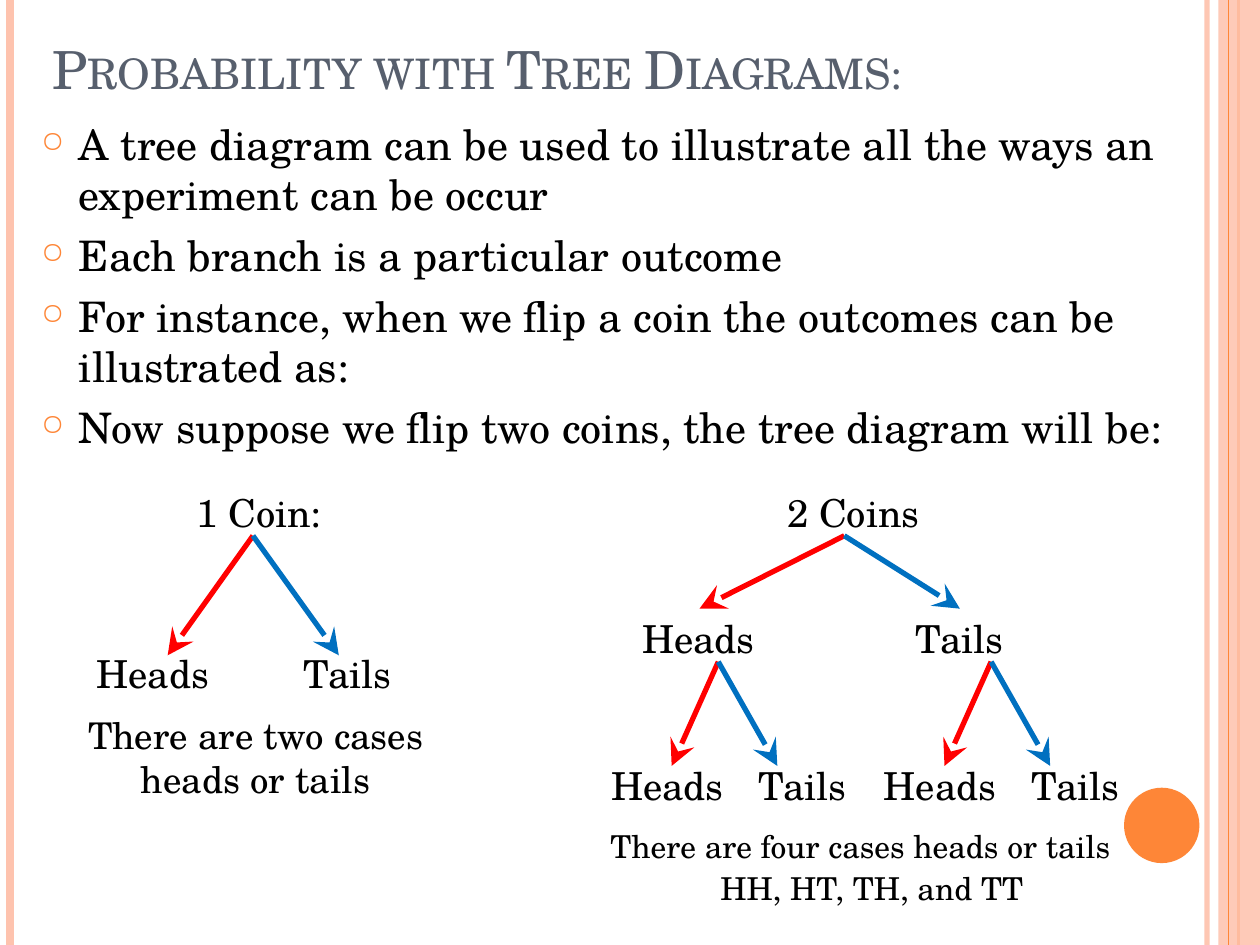
from lxml.etree import SubElement
from pptx import Presentation
from pptx.dml.color import RGBColor
from pptx.enum.shapes import MSO_CONNECTOR, MSO_SHAPE
from pptx.enum.text import MSO_ANCHOR, MSO_AUTO_SIZE, PP_ALIGN
from pptx.oxml.ns import qn
from pptx.util import Cm, Pt

ORANGE = RGBColor(0xFE, 0x86, 0x37)
PEACH = RGBColor(0xFE, 0xC3, 0xAE)
SLATE = RGBColor(0x57, 0x5F, 0x6D)
BLACK = RGBColor(0, 0, 0)
RED = RGBColor(0xFF, 0, 0)
BLUE = RGBColor(0, 0x70, 0xC0)
FONT = "TeX Gyre Schola"
WIDTH, HEIGHT = 25.4, 19.05

TITLE = "Probability with Tree Diagrams:"
POINTS = [
    "A tree diagram can be used to illustrate all the ways an experiment can be occur",
    "Each branch is a particular outcome",
    "For instance, when we flip a coin the outcomes can be illustrated as:",
    "Now suppose we flip two coins, the tree diagram will be:",
]
HEADINGS = [("1 Coin:", 3.71, 3.07), ("2 Coins", 15.62, 3.2)]
HEADING_TOP = 9.73
OUTCOMES = [("Heads", RED, 2.79), ("Tails", BLUE, 2.31)]
LABEL_HEIGHT = 1.19

SUBTREE_STEP = 5.5
ONE_COIN = dict(apex=(5.1, 10.8), tips=(3.38, 6.83), tip_y=13.21,
                labels=(1.7, 5.87), label_y=12.98)
TWO_COINS = dict(apex=(17.02, 10.8), tips=(14.1, 19.35), tip_y=12.27,
                 labels=(12.7, 12.7 + SUBTREE_STEP), label_y=12.27)
SECOND_FLIP = dict(apex=(14.48, 13.34), tips=(13.54, 15.67), tip_y=15.44,
                   labels=(12.07, 15.04), label_y=15.24)

SUMMARIES = [
    (["There are two cases", "heads or tails"], (1.47, 14.25, 7.37, 2.06), 21, False),
    (["There are four cases heads or tails"], (11.63, 16.54, 11.43, 1.02), 18, True),
    (["HH, HT, TH, and TT"], (11.86, 17.4, 11.43, 1.02), 18, True),
]

prs = Presentation()
prs.slide_width, prs.slide_height = Cm(WIDTH), Cm(HEIGHT)
slide = prs.slides.add_slide(prs.slide_layouts[6])


def add_line(start, end, color, weight):
    line = slide.shapes.add_connector(
        MSO_CONNECTOR.STRAIGHT, *(Cm(v) for v in (*start, *end)))
    line.line.color.rgb = color
    line.line.width = Pt(weight)
    SubElement(line._element.spPr, qn("a:effectLst"))
    return line


def set_alpha(fill_parent, percent):
    color = fill_parent.find(".//" + qn("a:srgbClr"))
    SubElement(color, qn("a:alpha"), val=str(percent * 1000))


def add_plain_shape(kind, box, color):
    shape = slide.shapes.add_shape(kind, *(Cm(v) for v in box))
    shape.shadow.inherit = False
    shape.fill.solid()
    shape.fill.fore_color.rgb = color
    shape.line.fill.background()
    return shape


def add_text(paragraphs, box, size, color=BLACK, align=PP_ALIGN.LEFT,
             wrap=True, grow=True):
    frame = slide.shapes.add_textbox(*(Cm(v) for v in box)).text_frame
    frame.word_wrap = wrap
    frame.auto_size = MSO_AUTO_SIZE.SHAPE_TO_FIT_TEXT if grow else MSO_AUTO_SIZE.NONE
    for i, text in enumerate(paragraphs):
        paragraph = frame.paragraphs[0] if i == 0 else frame.add_paragraph()
        paragraph.alignment = align
        run = paragraph.add_run()
        run.text = text
        run.font.name = FONT
        run.font.size = Pt(size)
        run.font.color.rgb = color
    return frame


def add_bullet(paragraph):
    paragraph.space_before = Pt(6)
    props = paragraph._p.get_or_add_pPr()
    props.set("marL", str(Cm(0.76)))
    props.set("indent", str(-Cm(0.76)))
    SubElement(SubElement(props, qn("a:buClr")), qn("a:srgbClr"), val=str(ORANGE))
    SubElement(props, qn("a:buSzPct"), val="70000")
    SubElement(props, qn("a:buChar"), char="○")


def add_fork(apex, tips, tip_y, labels, label_y, shift=0):
    for (outcome, color, width), tip, label in zip(OUTCOMES, tips, labels):
        branch = add_line((apex[0] + shift, apex[1]), (tip + shift, tip_y), color, 3)
        SubElement(branch.line._get_or_add_ln(), qn("a:tailEnd"),
                   type="stealth", w="lg", len="lg")
        add_text([outcome], (label + shift, label_y, width, LABEL_HEIGHT), 22, wrap=False)


def add_rule(x, color, weight):
    return add_line((x, 0), (x, HEIGHT), color, weight)


set_alpha(add_rule(24.33, PEACH, 3)._element.spPr, 93)
add_rule(0.2, PEACH, 4.5)
add_rule(24.97, ORANGE, 1.5)
side_band = add_plain_shape(MSO_SHAPE.RECTANGLE, (24.56, 0, 0.84, HEIGHT), PEACH)
set_alpha(side_band._element.spPr, 87)
add_rule(24.77, ORANGE, 0.75)
add_plain_shape(MSO_SHAPE.OVAL, (22.66, 15.88, 1.52, 1.52), ORANGE)

title = add_text([TITLE], (0.81, 0.58, 20.75, 1.57), 30, SLATE, grow=False)
title.vertical_anchor = MSO_ANCHOR.BOTTOM
title.paragraphs[0].runs[0].font._element.set("cap", "small")

points = add_text(POINTS, (0.58, 2.26, 23.29, 7.19), 24, grow=False)
for point in points.paragraphs:
    add_bullet(point)

for heading, left, width in HEADINGS:
    add_text([heading], (left, HEADING_TOP, width, LABEL_HEIGHT), 22, wrap=False)

add_fork(**ONE_COIN)
add_fork(**TWO_COINS)
for first_flip in range(len(OUTCOMES)):
    add_fork(**SECOND_FLIP, shift=first_flip * SUBTREE_STEP)

for lines, box, size, wrap in SUMMARIES:
    add_text(lines, box, size, align=PP_ALIGN.CENTER, wrap=wrap)

prs.save("out.pptx")
